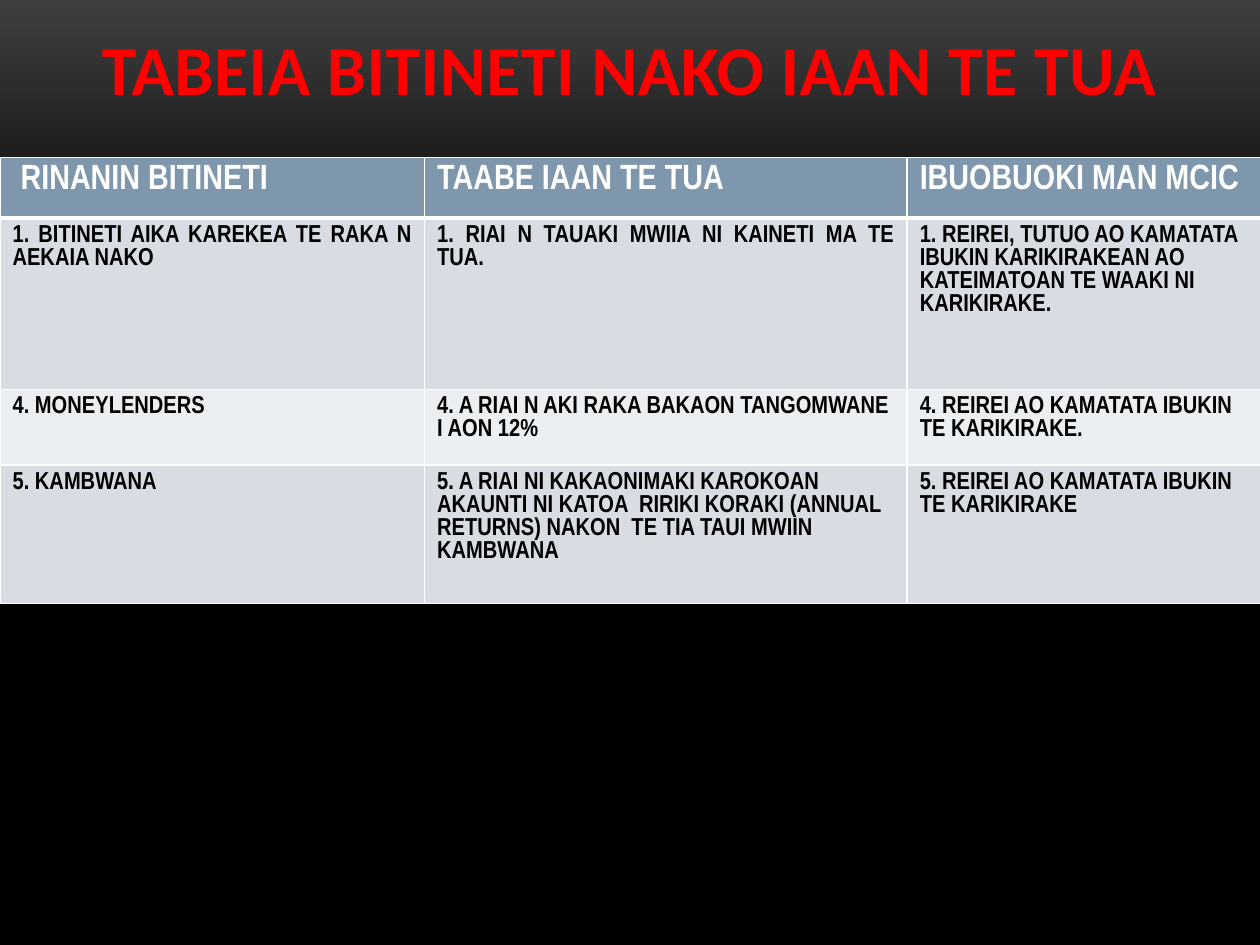
"""Build the slide that lists businesses, their duties and the help on offer."""
from copy import deepcopy

from lxml import etree
from pptx import Presentation
from pptx import util as u
from pptx.dml.color import RGBColor
from pptx.enum import text as t
from pptx.oxml.ns import qn

RED = RGBColor(0xFF, 0x00, 0x00)
WHITE = RGBColor(0xFF, 0xFF, 0xFF)
BLACK = RGBColor(0x00, 0x00, 0x00)
GREY = RGBColor(0x3F, 0x3F, 0x3F)
STEEL = RGBColor(0x7E, 0x97, 0xAD)
MIST = RGBColor(0xD8, 0xDD, 0xE3)
PALE = RGBColor(0xEC, 0xEF, 0xF1)

ROWS = [
    (0.48, [" RINANIN BITINETI", "TAABE IAAN TE TUA", "IBUOBUOKI MAN MCIC"]),
    (1.36, ["1. BITINETI AIKA KAREKEA TE RAKA N AEKAIA NAKO",
            "1. RIAI N TAUAKI MWIIA NI KAINETI MA TE TUA.",
            "1. REIREI, TUTUO AO KAMATATA IBUKIN KARIKIRAKEAN AO "
            "KATEIMATOAN TE WAAKI NI KARIKIRAKE."]),
    (0.6, ["4. MONEYLENDERS",
           "4. A RIAI N AKI RAKA BAKAON TANGOMWANE I AON 12%",
           "4. REIREI AO KAMATATA IBUKIN TE KARIKIRAKE."]),
    (1.1, ["5. KAMBWANA",
           "5. A RIAI NI KAKAONIMAKI KAROKOAN AKAUNTI NI KATOA  RIRIKI KORAKI "
           "(ANNUAL RETURNS) NAKON  TE TIA TAUI MWIIN KAMBWANA",
           "5. REIREI AO KAMATATA IBUKIN TE KARIKIRAKE"]),
]
COLS = [3.37, 3.83, 2.91]


def style(font, color, **form):
    for key, val in form.items():
        setattr(font, key, val)
    font.color.rgb = color


def border(cell, widths):
    props = cell._tc.get_or_add_tcPr()
    for side, width in widths.items():
        line = etree.SubElement(props, qn("a:ln" + side), w=str(u.Pt(width)))
        fill = etree.SubElement(line, qn("a:solidFill"))
        etree.SubElement(fill, qn("a:srgbClr"), val=str(WHITE))


deck = Presentation()
deck.slide_width, deck.slide_height = u.Inches(10), u.Inches(7.5)
slide = deck.slides.add_slide(deck.slide_layouts[5])

back = slide.background.fill
back.gradient()
back.gradient_angle = 270
stops = back.gradient_stops
for stop, color, place in zip(stops, (GREY, BLACK), (0, 0.31)):
    stop.color.rgb = color
    stop.position = place
last = slide.background._cSld.find(".//" + qn("a:gsLst"))[-1]
end = deepcopy(last)
end.set("pos", "100000")
last.addnext(end)

title = slide.shapes.title
place = {"left": 0, "top": 0.01, "width": 10, "height": 0.91}
for key, val in place.items():
    setattr(title, key, u.Inches(val))
frame = title.text_frame
frame.text = "TABEIA BITINETI NAKO IAAN TE TUA"
frame.vertical_anchor = t.MSO_ANCHOR.BOTTOM
frame.paragraphs[0].alignment = t.PP_ALIGN.CENTER
run = frame.paragraphs[0].runs[0]
style(run.font, RED, name="Calibri", size=u.Pt(40), bold=True)
run.font._element.set("spc", "30")

table = slide.shapes.add_table(
    len(ROWS), len(COLS), 0, u.Inches(1.25), u.Inches(10.11), u.Inches(3.54)).table
for col, width in zip(table.columns, COLS):
    col.width = u.Inches(width)

for r, (height, words) in enumerate(ROWS):
    table.rows[r].height = u.Inches(height)
    head = r == 0
    for c, word in enumerate(words):
        cell = table.cell(r, c)
        border(cell, {"L": 1, "R": 1, "T": 3 if r == 1 else 1, "B": 3 if head else 1})
        cell.fill.solid()
        cell.fill.fore_color.rgb = STEEL if head else MIST if r % 2 else PALE
        cell.text = word
        para = cell.text_frame.paragraphs[0]
        if r == 1 and c < 2:
            para.alignment = t.PP_ALIGN.JUSTIFY
        style(para.runs[0].font, WHITE if head else BLACK,
              name="Arial Narrow", size=u.Pt(20 if head else 14), bold=True)

deck.save("out.pptx")
